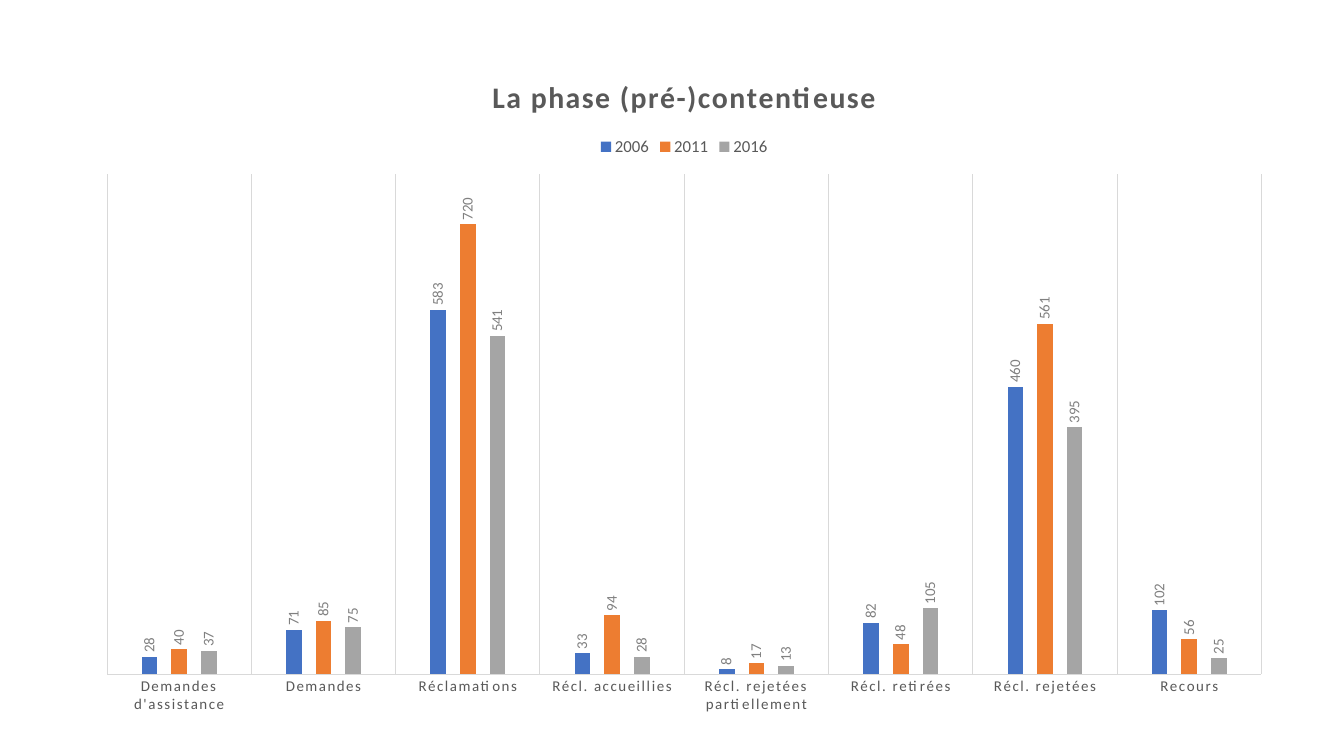
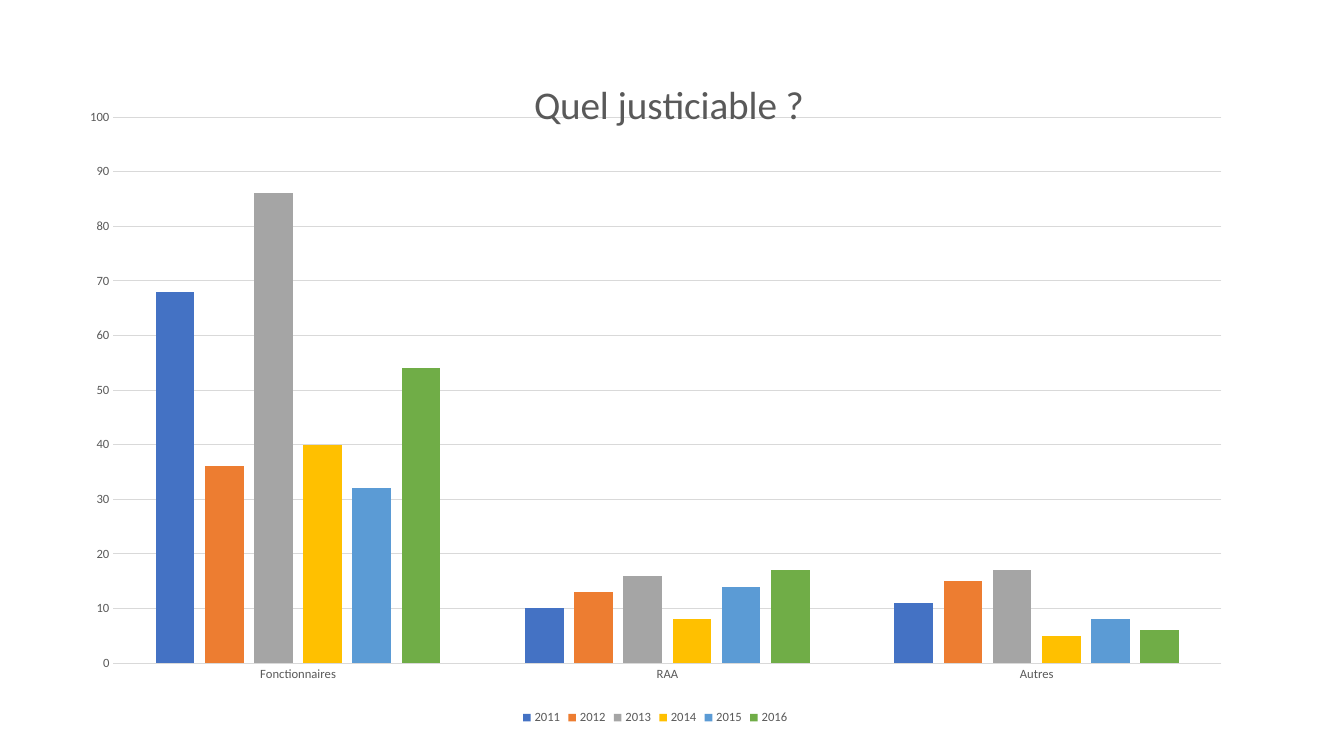
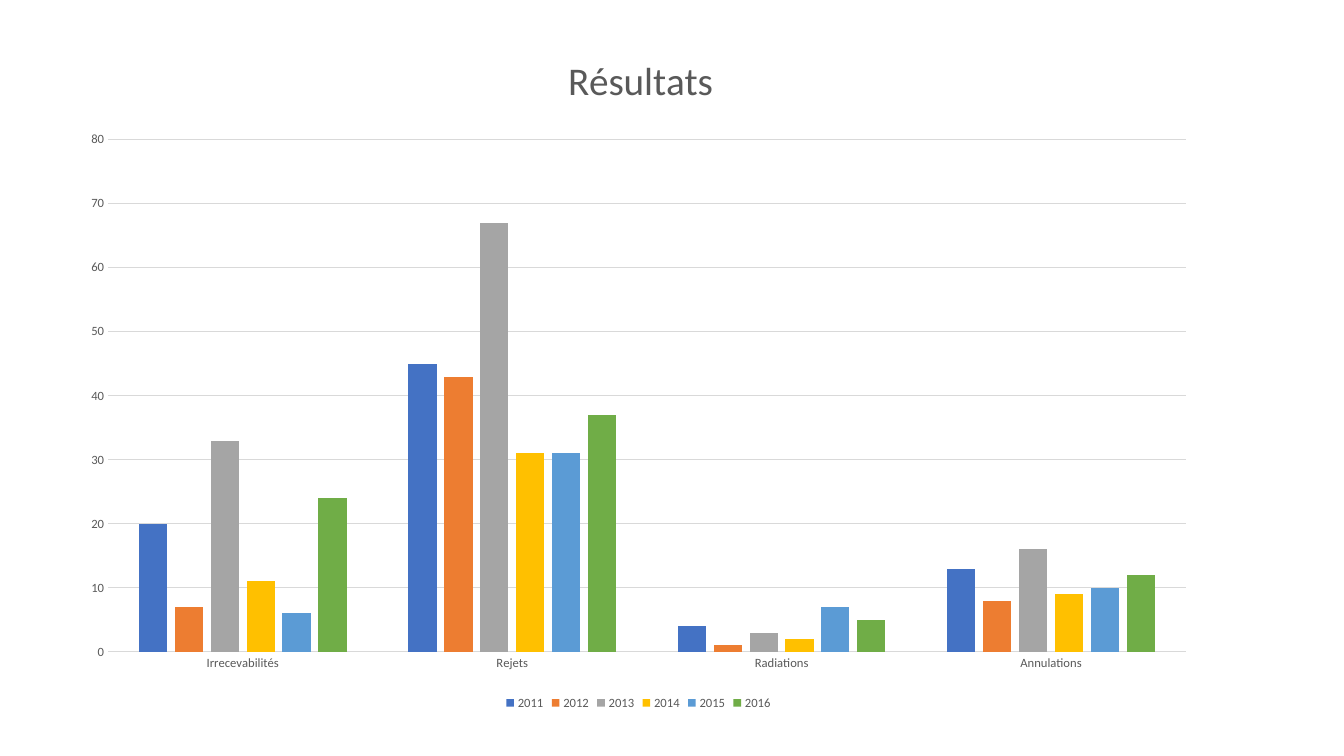
"""Three column charts on disputes: pre-litigation phase, applicants and results."""
from lxml import etree
from pptx import Presentation
from pptx.chart.data import CategoryChartData
from pptx.dml.color import RGBColor
from pptx.enum.chart import XL_CHART_TYPE, XL_LABEL_POSITION, XL_LEGEND_POSITION, XL_TICK_MARK
from pptx.oxml.ns import qn
from pptx.util import Pt

COLUMNS = XL_CHART_TYPE.COLUMN_CLUSTERED
OUTSIDE_END = XL_LABEL_POSITION.OUTSIDE_END
TOP, BOTTOM = XL_LEGEND_POSITION.TOP, XL_LEGEND_POSITION.BOTTOM
NO_TICK = XL_TICK_MARK.NONE
FONT = "Calibri"
COLORS = {
    "text": "595959", "label": "808080", "line": "D9D9D9",
    "series": ["4472C4", "ED7D31", "A5A5A5", "FFC000", "5B9BD5", "70AD47"],
}
YEARS = ["2011", "2012", "2013", "2014", "2015", "2016"]
YEARLY = {
    "years": YEARS, "legend": BOTTOM, "legend_size": 9, "axis_size": 9,
    "gap": 219, "overlap": -27, "title_format": {"size": 28}, "detailed": False,
}
CHARTS = [
    {
        "title": "La phase (pré-)contentieuse",
        "title_format": {"size": 21.28, "bold": True, "spacing": 120},
        "at": (59.3, 37.1, 858.96, 482.4),
        "years": ["2006", "2011", "2016"], "legend": TOP, "legend_size": 12,
        "axis_size": 10.64, "gap": 444, "overlap": -90, "maximum": 800, "detailed": True,
        "rows": {
            "Demandes d'assistance": (28, 40, 37),
            "Demandes": (71, 85, 75),
            "Réclamations": (583, 720, 541),
            "Récl. accueillies": (33, 94, 28),
            "Récl. rejetées partiellement": (8, 17, 13),
            "Récl. retirées": (82, 48, 105),
            "Récl. rejetées": (460, 561, 395),
            "Recours": (102, 56, 25),
        },
    },
    {
        **YEARLY, "title": "Quel justiciable ?",
        "at": (51.84, 45.6, 832.32, 475.2), "maximum": 100,
        "title_place": {"x": 0.39, "y": 0.01},
        "plot_area": {"x": 0.035, "y": 0.08, "w": 0.951, "h": 0.821},
        "rows": {
            "Fonctionnaires": (68, 36, 86, 40, 32, 54),
            "RAA": (10, 13, 16, 8, 14, 17),
            "Autres": (11, 15, 17, 5, 8, 6),
        },
    },
    {
        **YEARLY, "title": "Résultats ",
        "at": (48.96, 20.6, 814.32, 489.6), "maximum": 80,
        "title_place": {"x": 0.432, "y": 0.026},
        "rows": {
            "Irrecevabilités": (20, 7, 33, 11, 6, 24),
            "Rejets": (45, 43, 67, 31, 31, 37),
            "Radiations": (4, 1, 3, 2, 7, 5),
            "Annulations": (13, 8, 16, 9, 10, 12),
        },
    },
]


def style_font(font, size, color="text", bold=False, spacing=0):
    font.name, font.size, font.bold = FONT, Pt(size), bold
    font.color.rgb = RGBColor.from_string(COLORS[color])
    if spacing:
        font._element.set("spc", str(spacing))


def place_part(part, index, **settings):
    for layout in part.findall(qn("c:layout")):
        part.remove(layout)
    layout = etree.Element(qn("c:layout"))
    part.insert(index, layout)
    manual = etree.SubElement(layout, qn("c:manualLayout"))
    for name, value in settings.items():
        etree.SubElement(manual, qn("c:" + name)).set("val", str(value))


deck = Presentation()
deck.slide_width, deck.slide_height = Pt(960), Pt(540)
line_color = RGBColor.from_string(COLORS["line"])
edges = {"xMode": "edge", "yMode": "edge"}

for item in CHARTS:
    page = deck.slides.add_slide(deck.slide_layouts[6])
    data = CategoryChartData()
    data.categories = list(item["rows"])
    for year, values in zip(item["years"], zip(*item["rows"].values())):
        data.add_series(year, values)
    chart = page.shapes.add_chart(COLUMNS, *map(Pt, item["at"]), data).chart
    chart.font.name, chart.font.size = FONT, Pt(10)

    chart.has_title = True
    title = chart.chart_title
    title.include_in_layout = False
    span = title.text_frame.paragraphs[0].add_run()
    span.text = item["title"]
    style_font(span.font, **item["title_format"])
    if "title_place" in item:
        place_part(title._element, 1, **edges, **item["title_place"])
    if "plot_area" in item:
        area = chart._chartSpace.chart.plotArea
        place_part(area, 0, layoutTarget="inner", **edges, **item["plot_area"])

    chart.has_legend = True
    chart.legend.position = item["legend"]
    chart.legend.include_in_layout = False
    style_font(chart.legend.font, item["legend_size"])

    detailed = item["detailed"]
    category_axis, value_axis = chart.category_axis, chart.value_axis
    for axis in (category_axis, value_axis):
        axis.major_tick_mark = axis.minor_tick_mark = NO_TICK
        axis.has_major_gridlines = (axis is category_axis) == detailed
        lines = [axis.format.line]
        if axis.has_major_gridlines:
            lines.append(axis.major_gridlines.format.line)
        for line in lines:
            line.color.rgb, line.width = line_color, Pt(0.75)
        spacing = 120 if detailed and axis is category_axis else 0
        style_font(axis.tick_labels.font, item["axis_size"], spacing=spacing)
    category_axis._element.find(qn("c:txPr")).find(qn("a:bodyPr")).set("rot", "-60000000")
    value_axis.format.line.fill.background()
    value_axis.minimum_scale, value_axis.maximum_scale = 0, item["maximum"]
    value_axis.major_unit = item["maximum"] / 8 if detailed else 10
    value_axis.visible = not detailed

    plot = chart.plots[0]
    plot.vary_by_categories = False
    plot.gap_width, plot.overlap = item["gap"], item["overlap"]
    for series, color in zip(plot.series, COLORS["series"]):
        series.format.fill.solid()
        series.format.fill.fore_color.rgb = RGBColor.from_string(color)
        if detailed:
            labels = series.data_labels
            labels.show_value, labels.position = True, OUTSIDE_END
            style_font(labels.font, item["axis_size"], color="label")
            body = labels._element.find(qn("c:txPr")).find(qn("a:bodyPr"))
            body.set("rot", "-5400000")
            body.set("vert", "horz")

deck.save("out.pptx")
